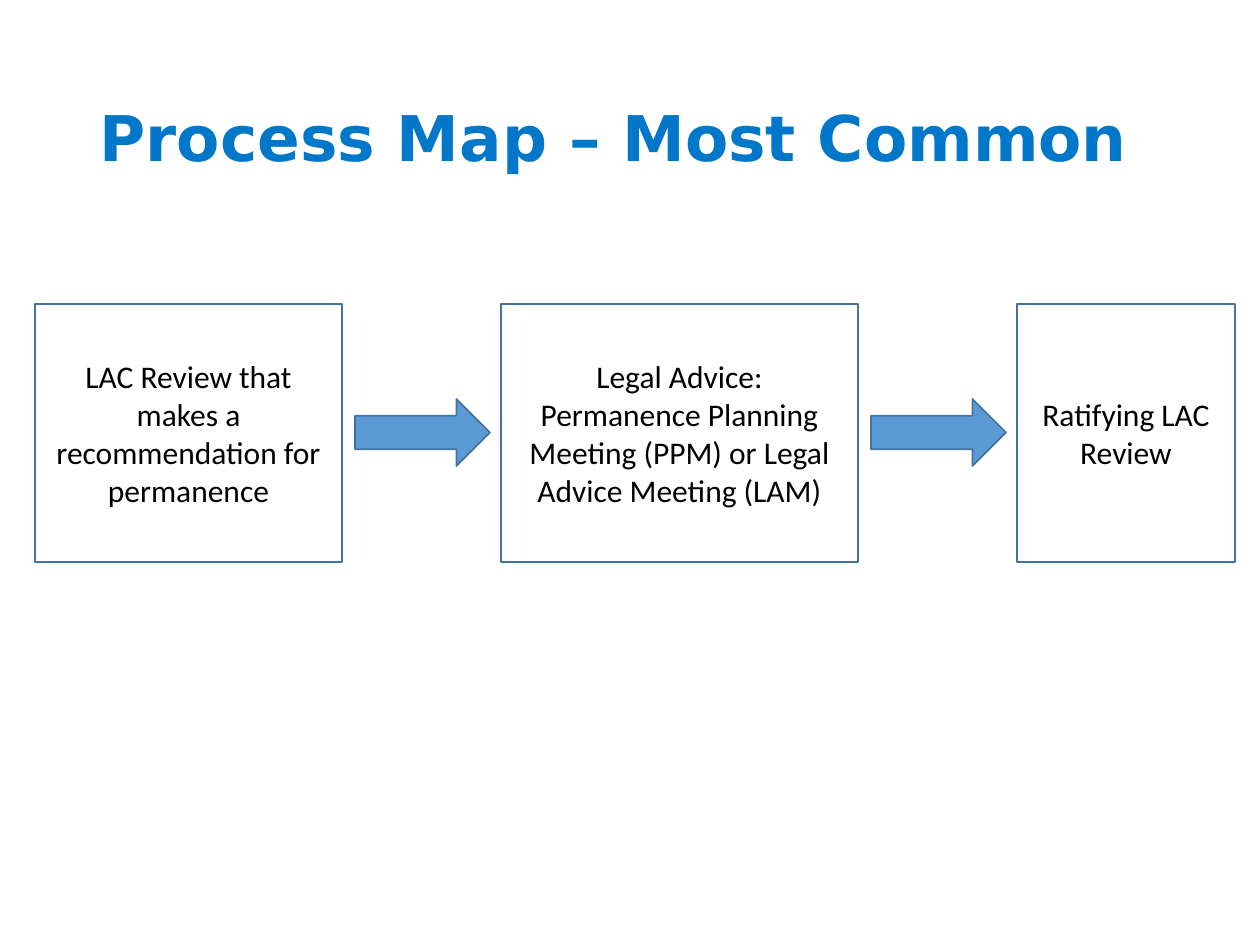
import pptx
import pptx.dml.color
import pptx.enum.shapes
import pptx.enum.text
import pptx.util

PX = 914400 // 126
OUTLINE = "43739E"
STEPS = [  # left, width, text
    (35, 307, "LAC Review that makes a recommendation for permanence"),
    (501, 357, "Legal Advice:\nPermanence Planning Meeting (PPM) or Legal Advice Meeting (LAM)"),
    (1017, 218, "Ratifying LAC Review"),
]
ARROW_GAP, ARROW_WIDTH, ARROW_HEIGHT = 13, 135, 67


def color(hex_value):
    return pptx.dml.color.RGBColor.from_string(hex_value)


def format_text(frame, font_name, size, hex_value, align, bold=False):
    frame.word_wrap = True
    frame.vertical_anchor = pptx.enum.text.MSO_ANCHOR.MIDDLE
    for paragraph in frame.paragraphs:
        paragraph.alignment = align
        for run in paragraph.runs:
            run.font.name = font_name
            run.font.size = pptx.util.Pt(size)
            run.font.bold = bold
            run.font.color.rgb = color(hex_value)


def add_outlined(slide, kind, left, top, width, height, fill=None):
    shape = slide.shapes.add_shape(kind, left * PX, top * PX, width * PX, height * PX)
    shape.shadow.inherit = False
    shape.line.color.rgb = color(OUTLINE)
    shape.line.width = pptx.util.Pt(1)
    if fill:
        shape.fill.solid()
        shape.fill.fore_color.rgb = color(fill)
    else:
        shape.fill.background()
    return shape


def place_title(slide, left, top, width, height):
    title = slide.shapes.title
    title.left, title.top = left * PX, top * PX
    title.width, title.height = width * PX, height * PX
    frame = title.text_frame
    frame.text = "Process Map – Most Common"
    frame.auto_size = pptx.enum.text.MSO_AUTO_SIZE.NONE
    format_text(frame, "DejaVu Sans", 36, "0077C8",
                pptx.enum.text.PP_ALIGN.LEFT, bold=True)
    frame.paragraphs[0].line_spacing = 0.9


def add_process(slide, left, top, height):
    """Draw the steps in a row, with a centred arrow after each but the last."""
    shapes = pptx.enum.shapes.MSO_SHAPE
    first_left = STEPS[0][0]
    for index, (step_left, width, text) in enumerate(STEPS):
        x = left + step_left - first_left
        step = add_outlined(slide, shapes.RECTANGLE, x, top, width, height)
        step.text_frame.text = text
        format_text(step.text_frame, "Calibri", 18, "000000",
                    pptx.enum.text.PP_ALIGN.CENTER)
        if index < len(STEPS) - 1:
            add_outlined(slide, shapes.RIGHT_ARROW, x + width + ARROW_GAP,
                         top + (height - ARROW_HEIGHT) // 2,
                         ARROW_WIDTH, ARROW_HEIGHT, fill="5B9BD5")


def main():
    presentation = pptx.Presentation()
    presentation.slide_width = 1260 * PX
    presentation.slide_height = 945 * PX
    slide = presentation.slides.add_slide(presentation.slide_layouts[5])
    place_title(slide, 87, 50, 1086, 183)
    add_process(slide, 35, 304, 258)
    presentation.save("out.pptx")


if __name__ == "__main__":
    main()
